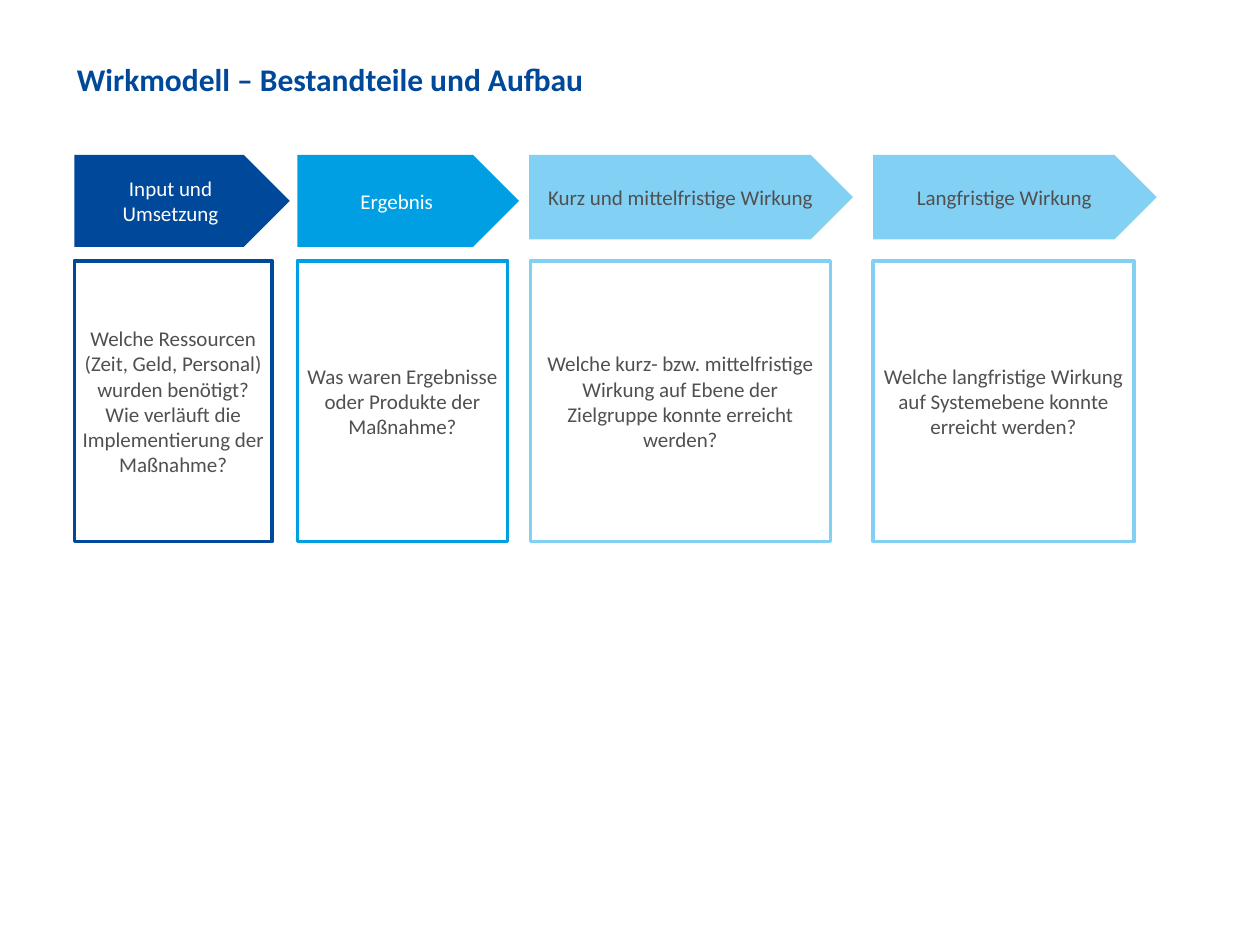
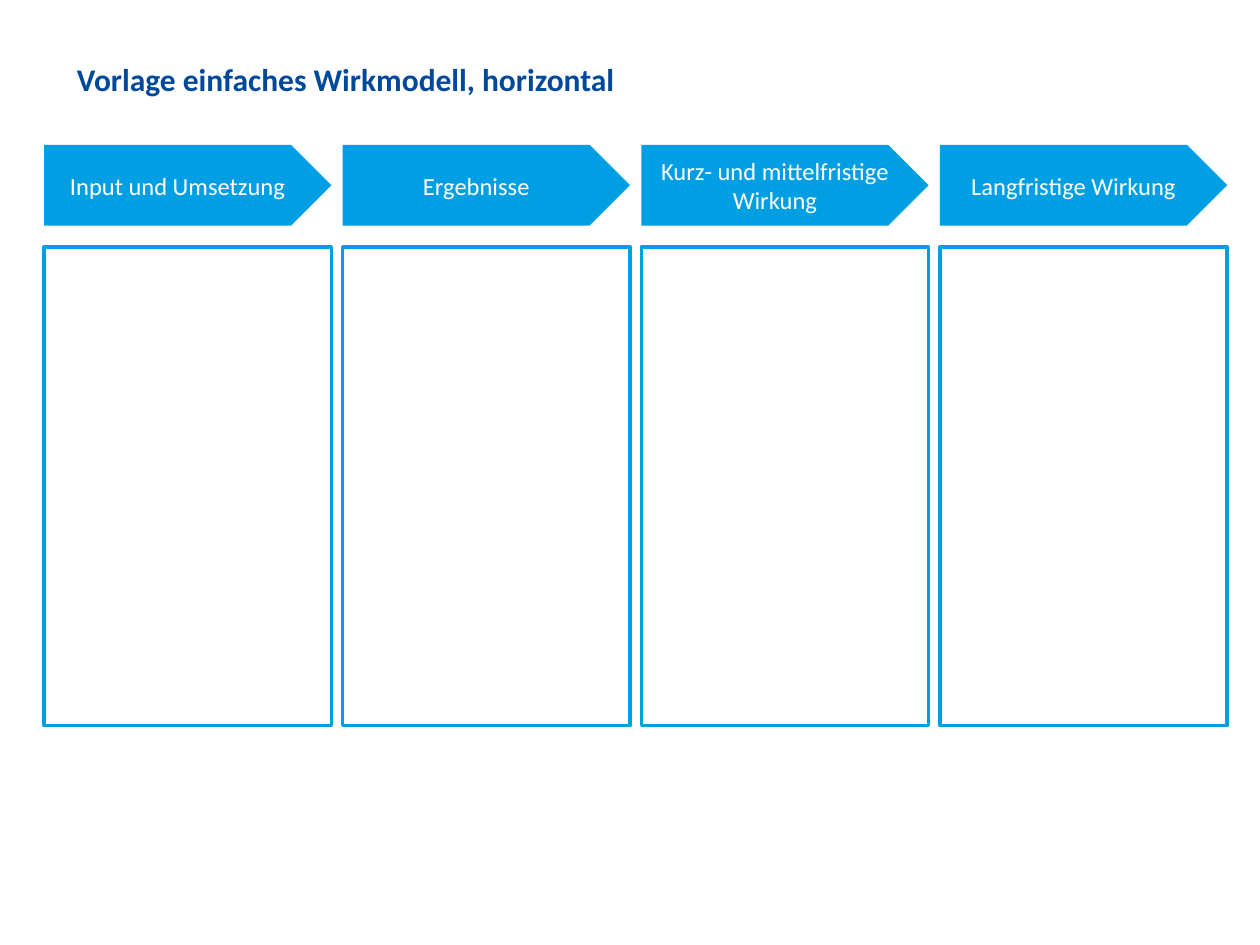
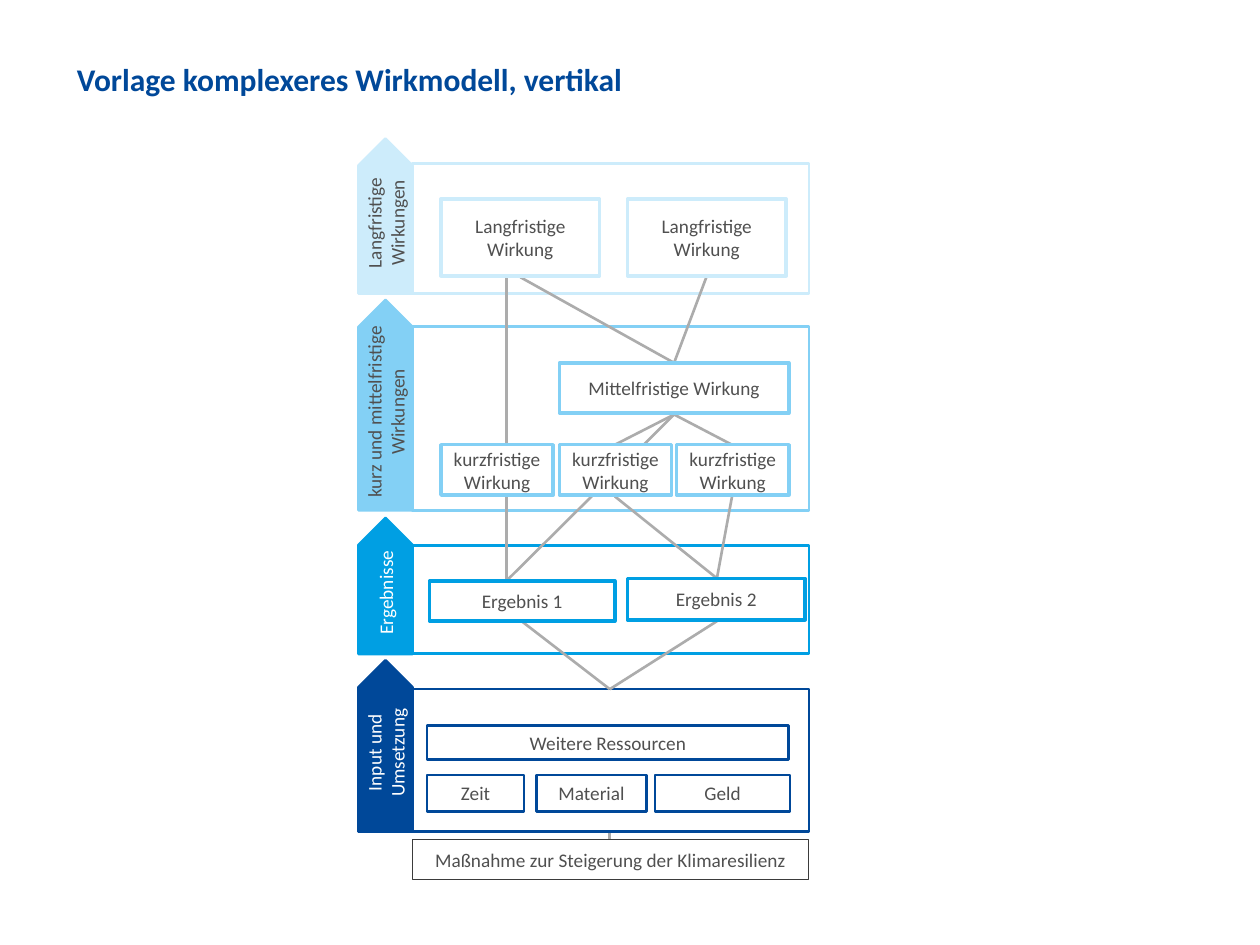
from lxml import etree
from pptx import Presentation
from pptx.dml.color import RGBColor
from pptx.enum.shapes import MSO_CONNECTOR, MSO_SHAPE
from pptx.enum.text import MSO_ANCHOR, MSO_AUTO_SIZE, PP_ALIGN
from pptx.oxml.ns import qn
from pptx.util import Inches, Pt

RECTANGLE = MSO_SHAPE.RECTANGLE
PENTAGON = MSO_SHAPE.PENTAGON
STRAIGHT = MSO_CONNECTOR.STRAIGHT
TOP, MIDDLE = MSO_ANCHOR.TOP, MSO_ANCHOR.MIDDLE
LEFT, CENTER = PP_ALIGN.LEFT, PP_ALIGN.CENTER
NO_AUTOFIT = MSO_AUTO_SIZE.NONE

NAVY = RGBColor(0x00, 0x48, 0x99)
BLUE = RGBColor(0x00, 0x9F, 0xE3)
SKY = RGBColor(0x83, 0xD0, 0xF5)
PALE = RGBColor(0xCD, 0xEC, 0xFB)
WHITE = RGBColor(0xFF, 0xFF, 0xFF)
TEXT_GRAY = RGBColor(0x50, 0x50, 0x50)
LINE_GRAY = RGBColor(0xAC, 0xAC, 0xAC)
DARK_GRAY = RGBColor(0x3B, 0x3B, 0x3B)

FONT = "Calibri"
TITLE_ONLY = 5
NARROW_MARGIN = 0.04
PANEL_LEFT, PANEL_WIDTH = 3.27, 3.15
ARROW_CENTER, ARROW_WIDTH = 3.06, 0.43


def format_text(paragraph, size, color, alignment=CENTER, bold=False):
    """Set the font and alignment of one paragraph."""
    paragraph.alignment = alignment
    font = paragraph.font
    font.name, font.size, font.bold = FONT, Pt(size), bold
    font.color.rgb = color


def add_titled_slide(presentation, title):
    """Add a slide with the shared title style."""
    slide = presentation.slides.add_slide(presentation.slide_layouts[TITLE_ONLY])
    shape = slide.shapes.title
    shape.left, shape.top = Inches(0.51), Inches(0.43)
    shape.width, shape.height = Inches(5.35), Inches(0.4)
    frame = shape.text_frame
    frame.text = title
    frame.auto_size = NO_AUTOFIT
    frame.vertical_anchor = TOP
    format_text(frame.paragraphs[0], 18, NAVY, LEFT, True)
    return slide


def add_block(slide, kind, bounds, text="", size=11, color=TEXT_GRAY,
              fill=None, line=None, line_width=2, margin=NARROW_MARGIN):
    """Add a flat preset shape with centred text."""
    shape = slide.shapes.add_shape(kind, *map(Inches, bounds))
    shape.shadow.inherit = False
    if fill is None:
        shape.fill.background()
    else:
        shape.fill.solid()
        shape.fill.fore_color.rgb = fill
    if line is None:
        shape.line.fill.background()
    else:
        shape.line.color.rgb = line
        shape.line.width = Pt(line_width)
    if text:
        frame = shape.text_frame
        frame.text = text
        frame.word_wrap = True
        frame.vertical_anchor = MIDDLE
        if margin is not None:
            frame.margin_left = frame.margin_right = Inches(margin)
            frame.margin_top = frame.margin_bottom = Inches(margin)
        format_text(frame.paragraphs[0], size, color)
    return shape


def add_header_arrow(slide, bounds, text, size, fill, color=WHITE):
    """Add an arrow that heads a column."""
    add_block(slide, PENTAGON, bounds, text, size, color, fill, margin=None)


def add_link(slide, start_x, start_y, end_x, end_y):
    """Add a gray line between two points."""
    points = map(Inches, (start_x, start_y, end_x, end_y))
    connector = slide.shapes.add_connector(STRAIGHT, *points)
    connector.line.color.rgb = LINE_GRAY
    connector.line.width = Pt(1.5)
    etree.SubElement(connector._element.spPr, qn("a:effectLst"))


def add_panel(slide, top, height, line, line_width=1.5, text=""):
    """Add a wide frame of the vertical model."""
    add_block(slide, RECTANGLE, (PANEL_LEFT, top, PANEL_WIDTH, height), text,
              fill=WHITE, line=line, line_width=line_width)


def add_stage_arrow(slide, bottom, length, text, fill, color):
    """Add an upward arrow that stands on the bottom of its panel."""
    left = ARROW_CENTER - length / 2
    top = bottom - length / 2 - ARROW_WIDTH / 2
    arrow = add_block(slide, PENTAGON, (left, top, length, ARROW_WIDTH), text,
                      color=color, fill=fill, line=fill, line_width=1.5)
    arrow.rotation = 270


def build_components(presentation):
    """Build the slide that explains the parts of the model."""
    slide = add_titled_slide(presentation, "Wirkmodell – Bestandteile und Aufbau")
    columns = [
        ("Input und Umsetzung", (0.59, 1.71, 0.73), (0.59, 1.57), NAVY, WHITE,
         "Welche Ressourcen (Zeit, Geld, Personal) wurden benötigt? "
         "Wie verläuft die Implementierung der Maßnahme?"),
        ("Ergebnis", (2.36, 1.76, 0.73), (2.36, 1.67), BLUE, WHITE,
         "Was waren Ergebnisse oder Produkte der Maßnahme?"),
        ("Kurz und mittelfristige Wirkung", (4.2, 2.57, 0.67), (4.21, 2.38),
         SKY, TEXT_GRAY,
         "Welche kurz- bzw. mittelfristige Wirkung auf Ebene der Zielgruppe "
         "konnte erreicht werden?"),
        ("Langfristige Wirkung", (6.93, 2.25, 0.67), (6.93, 2.07),
         SKY, TEXT_GRAY,
         "Welche langfristige Wirkung auf Systemebene konnte erreicht werden?"),
    ]
    for heading, arrow, box, accent, color, question in columns:
        arrow_left, arrow_width, arrow_height = arrow
        box_left, box_width = box
        add_header_arrow(slide, (arrow_left, 1.23, arrow_width, arrow_height),
                         heading, 12, accent, color)
        add_block(slide, RECTANGLE, (box_left, 2.07, box_width, 2.23),
                  question, 12, line=accent)


def build_horizontal_model(presentation):
    """Build the template with four equal columns."""
    slide = add_titled_slide(presentation,
                             "Vorlage einfaches Wirkmodell, horizontal")
    headings = ["Input und Umsetzung", "Ergebnisse",
                "Kurz- und mittelfristige Wirkung", "Langfristige Wirkung"]
    width, gap = 2.28, 0.09
    for index, heading in enumerate(headings):
        left = 0.35 + index * (width + gap)
        add_header_arrow(slide, (left, 1.15, width, 0.64), heading, 14, BLUE)
        add_block(slide, RECTANGLE, (left, 1.96, width, 3.8), line=BLUE)


def build_vertical_model(presentation):
    """Build the template with four linked stages."""
    slide = add_titled_slide(presentation,
                             "Vorlage komplexeres Wirkmodell, vertikal")
    stages = [
        ("Langfristige Wirkungen", 1.3, 1.03, 1.23, PALE, TEXT_GRAY),
        ("kurz und mittelfristige Wirkungen", 2.59, 1.46, 1.67, SKY, TEXT_GRAY),
        ("Ergebnisse", 4.33, 0.86, 1.08, BLUE, WHITE),
        ("Input und Umsetzung", 5.47, 1.13, 1.36, NAVY, WHITE),
    ]
    links = [
        (5.35, 3.29, 4.02, 4.61), (4.88, 3.53, 5.35, 3.29),
        (5.81, 3.53, 5.35, 3.29), (4.84, 5.47, 4.14, 4.93),
        (4.84, 5.47, 5.69, 4.93), (5.81, 3.94, 5.69, 4.59),
        (4.88, 3.94, 5.69, 4.59), (4.02, 2.04, 4.02, 4.61),
        (4.13, 2.2, 5.35, 2.88), (5.61, 2.19, 5.35, 2.88),
    ]
    long_term, short_term = "Langfristige Wirkung", "kurzfristige Wirkung"
    boxes = [
        (long_term, (3.5, 1.58, 1.26, 0.61), PALE, 2),
        (long_term, (4.98, 1.58, 1.26, 0.61), PALE, 2),
        ("Mittelfristige Wirkung", (4.44, 2.88, 1.82, 0.4), SKY, 2),
        (short_term, (3.5, 3.53, 0.89, 0.4), SKY, 2),
        (short_term, (4.44, 3.53, 0.89, 0.4), SKY, 2),
        (short_term, (5.37, 3.53, 0.89, 0.4), SKY, 2),
        ("Ergebnis 1", (3.41, 4.61, 1.47, 0.32), BLUE, 2),
        ("Ergebnis 2", (4.98, 4.59, 1.41, 0.33), BLUE, 2),
        ("Weitere Ressourcen", (3.39, 5.76, 2.87, 0.27), NAVY, 1.5),
        ("Zeit", (3.39, 6.15, 0.77, 0.29), NAVY, 1.5),
        ("Material", (4.26, 6.15, 0.87, 0.29), NAVY, 1.5),
        ("Geld", (5.2, 6.15, 1.07, 0.29), NAVY, 1.5),
    ]
    add_link(slide, 4.84, 6.66, 4.84, 5.47)
    for heading, top, height, length, accent, color in stages:
        add_panel(slide, top, height, accent)
        add_stage_arrow(slide, top + height, length, heading, accent, color)
    add_panel(slide, 6.66, 0.32, DARK_GRAY, 0.5,
              "Maßnahme zur Steigerung der Klimaresilienz")
    for link in links:
        add_link(slide, *link)
    for text, bounds, accent, line_width in boxes:
        add_block(slide, RECTANGLE, bounds, text, fill=WHITE, line=accent,
                  line_width=line_width)


def main():
    """Build and save the presentation."""
    presentation = Presentation()
    presentation.slide_width = Inches(10)
    presentation.slide_height = Inches(7.5)
    build_components(presentation)
    build_horizontal_model(presentation)
    build_vertical_model(presentation)
    presentation.save("out.pptx")


if __name__ == "__main__":
    main()
